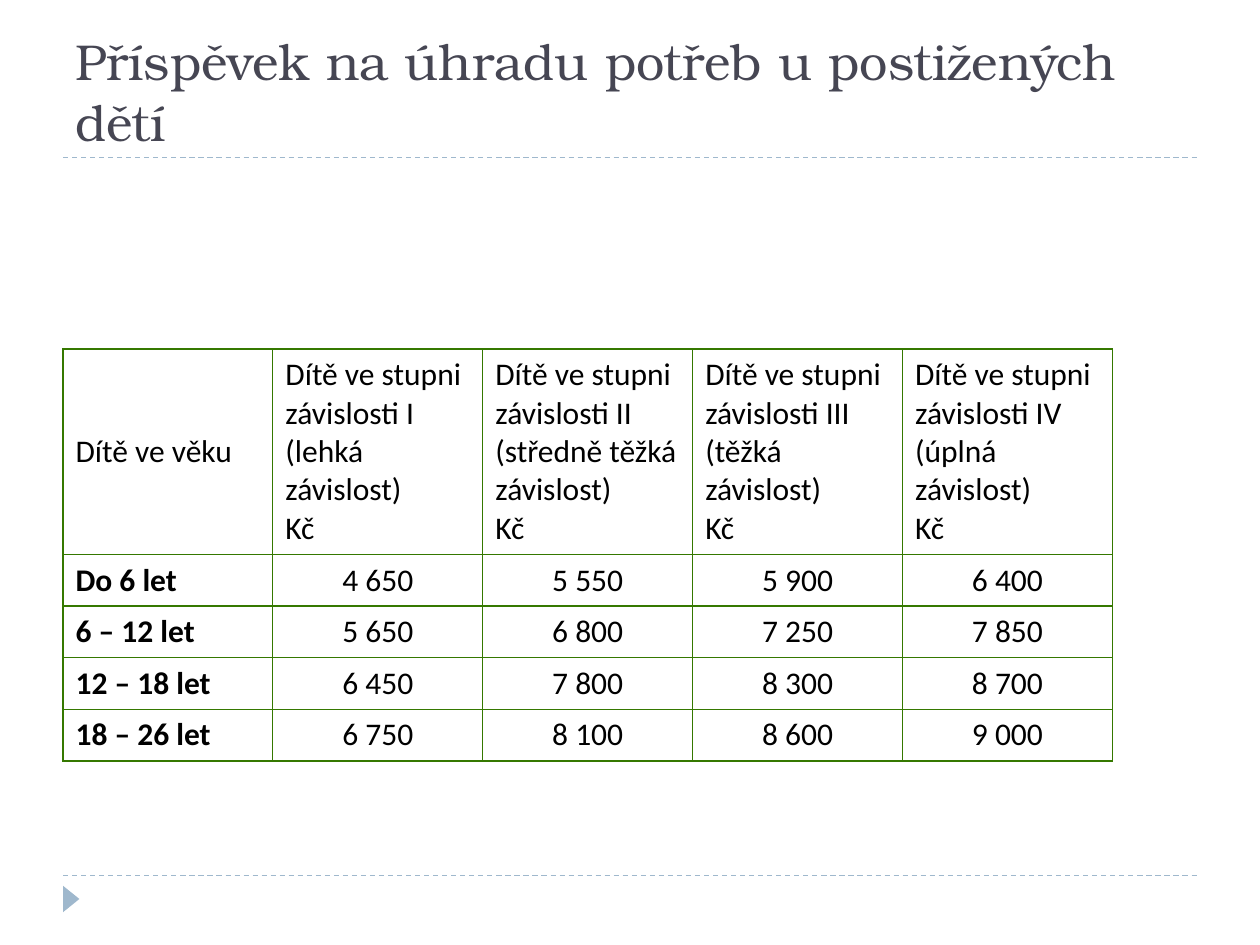
from dataclasses import dataclass

from lxml import etree
from pptx import Presentation
from pptx import util as u
from pptx.dml.color import RGBColor
from pptx.enum import dml, shapes, text
from pptx.oxml import ns


@dataclass(frozen=True)
class Theme:
    title_font: str = "TeX Gyre Bonum"
    body_font: str = "Calibri"
    title_size: float = 28.8
    body_size: float = 18
    line_width: float = 0.75
    title_color: str = "464653"
    body_color: str = "000000"
    accent: str = "9FB8CD"
    border: str = "357800"


class SlideBuilder:
    def __init__(self, slide, theme):
        self.slide = slide
        self.theme = theme

    def add_run(self, paragraph, words, font, size, color, bold=False):
        run = paragraph.add_run()
        run.text = words
        run.font.name = font
        run.font.size = u.Pt(size)
        run.font.bold = bold
        run.font.color.rgb = RGBColor.from_string(color)

    def rule(self, top, left=0.5, right=9.5):
        line = self.slide.shapes.add_connector(
            shapes.MSO_CONNECTOR.STRAIGHT,
            u.Inches(left), u.Inches(top), u.Inches(right), u.Inches(top))
        line.line.color.rgb = RGBColor.from_string(self.theme.accent)
        line.line.width = u.Pt(self.theme.line_width)
        line.line.dash_style = dml.MSO_LINE.DASH
        properties = line._element.find(ns.qn("p:spPr"))
        etree.SubElement(properties, ns.qn("a:effectLst"))

    def marker(self, left, top, width, height):
        shape = self.slide.shapes.add_shape(
            shapes.MSO_SHAPE.ISOSCELES_TRIANGLE,
            u.Inches(left), u.Inches(top), u.Inches(width), u.Inches(height))
        shape.rotation = 90
        shape.shadow.inherit = False
        shape.fill.solid()
        shape.fill.fore_color.rgb = RGBColor.from_string(self.theme.accent)
        shape.line.fill.background()

    def title(self, words, left, top, width, height):
        box = self.slide.shapes.add_textbox(
            u.Inches(left), u.Inches(top), u.Inches(width), u.Inches(height))
        frame = box.text_frame
        frame.word_wrap = True
        frame.vertical_anchor = text.MSO_ANCHOR.BOTTOM
        self.add_run(frame.paragraphs[0], words, self.theme.title_font,
                     self.theme.title_size, self.theme.title_color)

    def border_cell(self, cell):
        properties = cell._tc.get_or_add_tcPr()
        for side in ("lnL", "lnR", "lnT", "lnB"):
            line = etree.SubElement(properties, ns.qn(f"a:{side}"),
                                    w=str(u.Pt(self.theme.line_width)))
            fill = etree.SubElement(line, ns.qn("a:solidFill"))
            etree.SubElement(fill, ns.qn("a:srgbClr"), val=self.theme.border)

    def fill_cell(self, cell, words, bold, centered):
        self.border_cell(cell)
        cell.fill.background()
        cell.vertical_anchor = text.MSO_ANCHOR.MIDDLE
        paragraph = cell.text_frame.paragraphs[0]
        if centered:
            paragraph.alignment = text.PP_ALIGN.CENTER
        for index, line in enumerate(words.split("\n")):
            if index:
                paragraph.add_line_break()
            self.add_run(paragraph, line, self.theme.body_font,
                         self.theme.body_size, self.theme.body_color, bold)

    def table(self, rows, left, top, width, header_height, row_height):
        heights = [header_height] + [row_height] * (len(rows) - 1)
        table = self.slide.shapes.add_table(
            len(rows), len(rows[0]), u.Inches(left), u.Inches(top),
            u.Inches(width), u.Inches(sum(heights))).table
        table.first_row = False
        table.horz_banding = False
        for row, height in zip(table.rows, heights):
            row.height = u.Inches(height)
        for row_index, row in enumerate(rows):
            for column_index, words in enumerate(row):
                in_body = row_index > 0
                self.fill_cell(table.cell(row_index, column_index), words,
                               bold=in_body and column_index == 0,
                               centered=in_body and column_index > 0)


DEGREES = [("I", "lehká"), ("II", "středně těžká"), ("III", "těžká"), ("IV", "úplná")]
ALLOWANCES = {
    "Do 6 let": (4650, 5550, 5900, 6400),
    "6 – 12 let": (5650, 6800, 7250, 7850),
    "12 – 18 let": (6450, 7800, 8300, 8700),
    "18 – 26 let": (6750, 8100, 8600, 9000),
}


def allowance_rows():
    header = ["Dítě ve věku"] + [
        f"Dítě ve stupni závislosti {degree}\n({name} závislost)\nKč"
        for degree, name in DEGREES]
    body = [[age] + [f"{amount:,}".replace(",", chr(160)) for amount in amounts]
            for age, amounts in ALLOWANCES.items()]
    return [header] + body


def main():
    presentation = Presentation()
    presentation.slide_width = u.Inches(10)
    presentation.slide_height = u.Inches(7.5)
    slide = presentation.slides.add_slide(presentation.slide_layouts[6])
    builder = SlideBuilder(slide, Theme())
    for top in (6.95, 1.25):
        builder.rule(top)
    builder.marker(0.46, 7.07, 0.21, 0.13)
    builder.title("Příspěvek na úhradu potřeb u postižených dětí", 0.5, 0.17, 9, 1.08)
    builder.table(allowance_rows(), 0.5, 2.77, 8.33, header_height=1.63, row_height=0.41)
    presentation.save("out.pptx")


if __name__ == "__main__":
    main()
